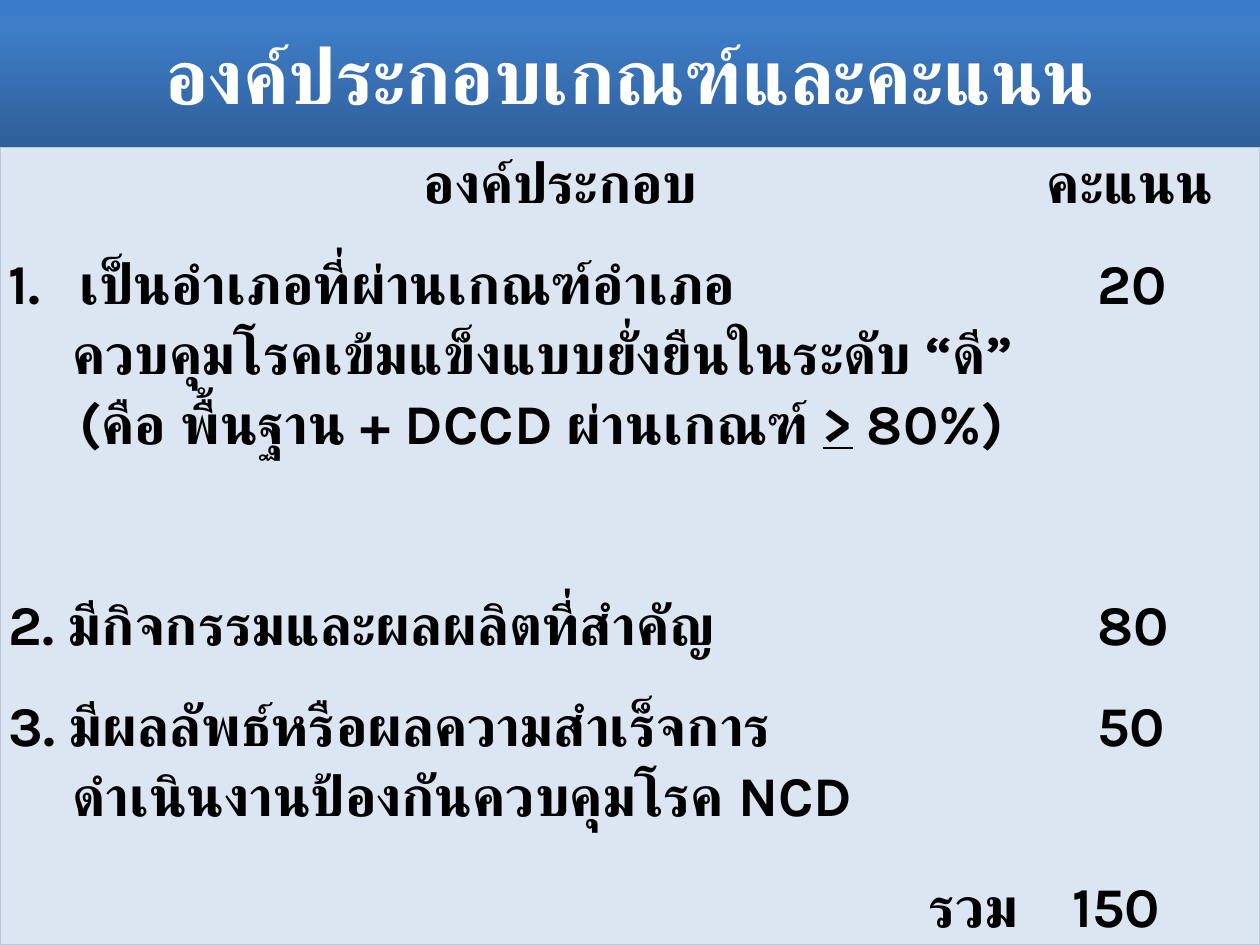
"""Build the slide of criteria and their scores."""
import copy
from typing import NamedTuple

import lxml.etree
import pptx
import pptx.dml.color
import pptx.enum.text
import pptx.oxml.ns
import pptx.util

Pt = pptx.util.Pt
qn = pptx.oxml.ns.qn
ALIGN = pptx.enum.text.PP_ALIGN
ANCHOR = pptx.enum.text.MSO_ANCHOR

FONT = "Karla"
COLORS = {
    "title_bottom": "2F5F99",
    "title_middle": "3D7CC7",
    "title_top": "3A7CCB",
    "title_text": "FFFFFF",
    "cell": "DCE6F2",
    "border": "BDC8DD",
    "text": "000000",
}
TITLE_HEIGHT = 84.24
COL_WIDTHS = (586.8, 133.2)
NO_STYLE = "{2D5ABB26-0587-4C30-8999-92F81FD0307C}"


class Run(NamedTuple):
    """A piece of text."""
    text: str
    underline: bool = False


class Para(NamedTuple):
    """A paragraph with its indents in points."""
    runs: tuple[Run, ...]
    left: float
    first: float
    align: ALIGN = ALIGN.LEFT
    numbered: bool = False


class Row(NamedTuple):
    """A table row: criterion paragraphs and a score."""
    height: float
    criterion: tuple[Para, ...]
    score: str
    score_first: float = -36


ROWS = (
    Row(57.6, (Para((Run("องค์ประกอบ"),), 72, -18, ALIGN.CENTER),), "คะแนน", -64.8),
    Row(195.12, (
        Para((Run("เป็นอำเภอที่ผ่านเกณฑ์อำเภอ"),), 40.3, -40.3, numbered=True),
        Para((
            Run("ควบคุมโรคเข้มแข็งแบบยั่งยืนในระดับ “ดี” (คือ พื้นฐาน + DCCD ผ่านเกณฑ์ "),
            Run(">", True),
            Run(" 80%)"),
        ), 40.3, -4),
    ), "20"),
    Row(57.6, (Para((Run("2. มีกิจกรรมและผลผลิตที่สำคัญ"),), 27.4, -27.4),), "80"),
    Row(103.68, (
        Para((Run("3. มีผลลัพธ์หรือผลความสำเร็จการ"),), 27.4, -27.4),
        Para((Run("ดำเนินงานป้องกันควบคุมโรค NCD"),), 36.3, 0),
    ), "50"),
    Row(41.76, (Para((Run("รวม"),), 36, -18, ALIGN.RIGHT),), "150", -50.4),
)


def rgb(name: str) -> pptx.dml.color.RGBColor:
    """Return a named colour."""
    return pptx.dml.color.RGBColor.from_string(COLORS[name])


def add_run(p, run: Run, size: float, color: str) -> None:
    """Add one bold run, with the font set for Latin and Thai."""
    r = p.add_run()
    r.text = run.text
    r.font.name = FONT
    r.font.size = Pt(size)
    r.font.bold = True
    r.font.underline = run.underline
    r.font.color.rgb = rgb(color)
    lxml.etree.SubElement(r.font._element, qn("a:cs"), typeface=FONT)


def add_title(s, text: str) -> None:
    """Format the title placeholder as a gradient band."""
    sp = s.shapes.title
    sp.left, sp.top, sp.width, sp.height = Pt(0), Pt(0), Pt(720), Pt(TITLE_HEIGHT)
    sp.shadow.inherit = False
    sp.fill.gradient()
    sp.fill.gradient_angle = 90
    gs = sp._element.spPr.find(".//" + qn("a:gs"))
    gs.addnext(copy.deepcopy(gs))
    stops = ((0, "title_bottom"), (0.8, "title_middle"), (1, "title_top"))
    for stop, (position, color) in zip(sp.fill.gradient_stops, stops):
        stop.position = position
        stop.color.rgb = rgb(color)
    tf = sp.text_frame
    tf.auto_size = pptx.enum.text.MSO_AUTO_SIZE.NONE
    tf.vertical_anchor = ANCHOR.MIDDLE
    p = tf.paragraphs[0]
    p.alignment = ALIGN.CENTER
    add_run(p, Run(text), 44, "title_text")


def set_borders(cell, edges: dict[str, bool]) -> None:
    """Draw a thin line on each chosen edge of a cell."""
    tc_pr = cell._tc.get_or_add_tcPr()
    for edge, shown in edges.items():
        if shown:
            ln = lxml.etree.SubElement(tc_pr, qn("a:ln" + edge), w=str(Pt(0.75)))
            fill = lxml.etree.SubElement(ln, qn("a:solidFill"))
            lxml.etree.SubElement(fill, qn("a:srgbClr"), val=COLORS["border"])


def fill_cell(cell, paras: tuple[Para, ...]) -> None:
    """Colour a cell and write its paragraphs."""
    cell.fill.solid()
    cell.fill.fore_color.rgb = rgb("cell")
    cell.margin_left = cell.margin_right = Pt(5)
    cell.margin_top = cell.margin_bottom = Pt(0)
    tf = cell.text_frame
    for i, para in enumerate(paras):
        p = tf.add_paragraph() if i else tf.paragraphs[0]
        p.alignment = para.align
        p.line_spacing = 1.07
        p_pr = p._p.get_or_add_pPr()
        p_pr.set("marL", str(Pt(para.left)))
        p_pr.set("indent", str(Pt(para.first)))
        if para.numbered:
            lxml.etree.SubElement(p_pr, qn("a:buFont"), typeface=FONT)
            lxml.etree.SubElement(p_pr, qn("a:buAutoNum"), type="arabicPeriod")
        for run in para.runs:
            add_run(p, run, 32, "text")


def add_score_table(s, rows: tuple[Row, ...]) -> None:
    """Add the table, framed by a thin outer border."""
    height = sum(row.height for row in rows)
    frame = s.shapes.add_table(len(rows), len(COL_WIDTHS), Pt(0), Pt(TITLE_HEIGHT),
                               Pt(sum(COL_WIDTHS)), Pt(height))
    table = frame.table
    table._tbl.tblPr.find(qn("a:tableStyleId")).text = NO_STYLE
    for column, width in zip(table.columns, COL_WIDTHS):
        column.width = Pt(width)
    for i, row in enumerate(rows):
        table.rows[i].height = Pt(row.height)
        score = (Para((Run(row.score),), 71.28, row.score_first),)
        for j, paras in enumerate((row.criterion, score)):
            cell = table.cell(i, j)
            set_borders(cell, {"L": j == 0, "R": j == 1,
                               "T": i == 0, "B": i == len(rows) - 1})
            fill_cell(cell, paras)


def main() -> None:
    """Build and save the slide."""
    prs = pptx.Presentation()
    prs.slide_width, prs.slide_height = Pt(720), Pt(540)
    s = prs.slides.add_slide(prs.slide_layouts[5])
    add_title(s, "องค์ประกอบเกณฑ์และคะแนน")
    add_score_table(s, ROWS)
    prs.save("out.pptx")


if __name__ == "__main__":
    main()
